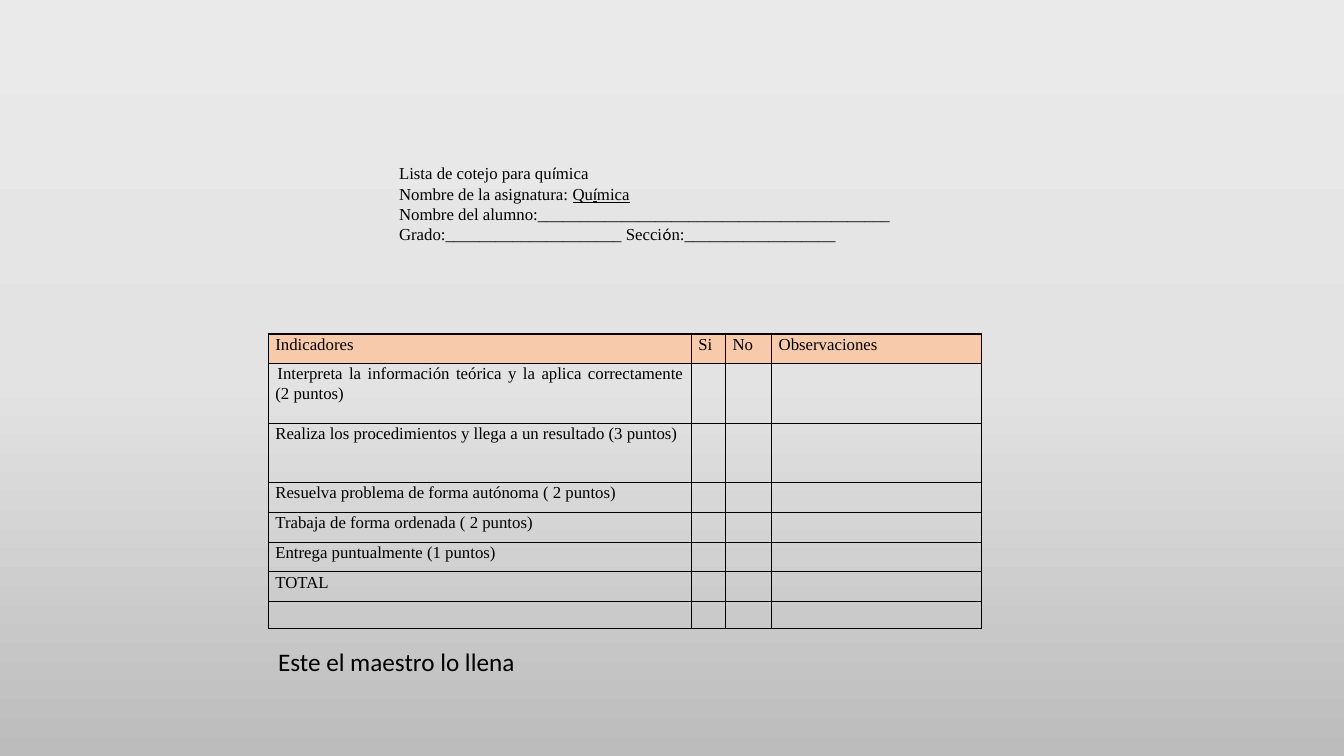
from copy import deepcopy

from lxml import etree
from pptx import Presentation
from pptx.dml.color import RGBColor
from pptx.enum.text import PP_ALIGN
from pptx.oxml.ns import qn
from pptx.util import Pt

LEFT, JUSTIFY = PP_ALIGN.LEFT, PP_ALIGN.JUSTIFY

BLACK = RGBColor(0x00, 0x00, 0x00)
PEACH = RGBColor(0xF7, 0xCA, 0xAC)
BACKDROP = [
    (0, RGBColor(0xEB, 0xEA, 0xEA)),
    (0.5, RGBColor(0xE4, 0xE3, 0xE3)),
    (1, RGBColor(0xBD, 0xBC, 0xBC)),
]
SERIF, SANS = "Times New Roman", "Calibri"

HEADINGS = ["Indicadores", "Si", "No", "Observaciones"]
INDICATORS = [
    "Interpreta la información teórica y la aplica correctamente (2 puntos)",
    "Realiza los procedimientos y llega a un resultado (3 puntos)",
    "Resuelva problema de forma autónoma ( 2 puntos)",
    "Trabaja de forma ordenada ( 2 puntos)",
    "Entrega puntualmente (1 puntos)",
]
COLUMN_WIDTHS = [302.2, 24.4, 33, 149.8]
ROW_HEIGHTS = [21.25, 42.5, 42.5, 21.25, 21.25, 21.25, 21.25, 19.4]

# Each line is a list of (words, format) pieces.
STUDENT_DATA = [
    [("Lista de cotejo para qu", {}), ("í", {"font": SANS}), ("mica", {})],
    [
        ("Nombre de la asignatura: ", {}),
        ("Qu", {"underline": True}),
        ("í", {"font": SANS, "underline": True}),
        ("mica", {"underline": True}),
    ],
    [("Nombre del alumno:" + "_" * 42, {})],
    [
        ("Grado:" + "_" * 21 + " Secci", {}),
        ("ó", {"font": SANS}),
        ("n:" + "_" * 18, {}),
    ],
]


def write(paragraph, words, font=SERIF, size=12, color=BLACK, underline=None):
    run = paragraph.add_run()
    run.text = words
    run.font.name = font
    run.font.size = Pt(size)
    run.font.color.rgb = color
    run.font.underline = underline


def indent_first_line(paragraph, points):
    paragraph._p.get_or_add_pPr().set("indent", str(Pt(points)))


class Sheet:
    """A slide together with the style of its elements."""

    border_width = 1
    cell_margin = 5.2
    line_spacing = 1.07
    first_indent = 1.5

    def __init__(self, slide):
        self.slide = slide

    def backdrop(self, colors):
        fill = self.slide.background.fill
        fill.gradient()
        fill.gradient_angle = 270
        stop_list = self.slide.element.find(".//" + qn("a:gsLst"))
        stop_list.insert(1, deepcopy(stop_list[0]))
        for stop, (position, color) in zip(fill.gradient_stops, colors):
            stop.position = position
            stop.color.rgb = color

    def text(self, left, top, width, height, lines, indent=0):
        frame = self.slide.shapes.add_textbox(
            Pt(left), Pt(top), Pt(width), Pt(height)).text_frame
        frame.word_wrap = True
        for number, pieces in enumerate(lines):
            line = frame.add_paragraph() if number else frame.paragraphs[0]
            indent_first_line(line, indent)
            for words, style in pieces:
                write(line, words, **style)

    def table(self, left, top, widths, heights):
        grid = self.slide.shapes.add_table(
            len(heights), len(widths), Pt(left), Pt(top),
            Pt(sum(widths)), Pt(sum(heights))).table
        for column, width in zip(grid.columns, widths):
            column.width = Pt(width)
        for row, height in zip(grid.rows, heights):
            row.height = Pt(height)
        return grid

    def cell(self, cell, words="", fill=None, align=LEFT, indent=0):
        cell.margin_left = cell.margin_right = Pt(self.cell_margin)
        cell.margin_top = cell.margin_bottom = 0
        self.borders(cell)
        if fill is None:
            cell.fill.background()
        else:
            cell.fill.solid()
            cell.fill.fore_color.rgb = fill
        entry = cell.text_frame.paragraphs[0]
        entry.alignment = align
        entry.line_spacing = self.line_spacing
        indent_first_line(entry, indent)
        if words:
            write(entry, words)
        else:
            etree.SubElement(entry._p, qn("a:endParaRPr"), sz="1200")

    def borders(self, cell):
        properties = cell._tc.get_or_add_tcPr()
        for side in ("lnL", "lnR", "lnT", "lnB"):
            line = etree.SubElement(
                properties, qn("a:" + side), w=str(Pt(self.border_width)))
            solid = etree.SubElement(line, qn("a:solidFill"))
            etree.SubElement(solid, qn("a:srgbClr"), val=str(BLACK))


def main():
    deck = Presentation()
    deck.slide_width, deck.slide_height = Pt(960), Pt(540)
    sheet = Sheet(deck.slides.add_slide(deck.slide_layouts[6]))
    sheet.backdrop(BACKDROP)

    checklist = sheet.table(191.5, 238.6, COLUMN_WIDTHS, ROW_HEIGHTS)
    for column, heading in enumerate(HEADINGS):
        sheet.cell(checklist.cell(0, column), heading, fill=PEACH)
    for row, indicator in enumerate(INDICATORS, start=1):
        sheet.cell(checklist.cell(row, 0), indicator, align=JUSTIFY,
                   indent=sheet.first_indent if row == 1 else 0)
    sheet.cell(checklist.cell(6, 0), "TOTAL")
    sheet.cell(checklist.cell(7, 0))
    for row in range(1, len(ROW_HEIGHTS)):
        for column in range(1, len(COLUMN_WIDTHS)):
            sheet.cell(checklist.cell(row, column))

    sheet.text(276.5, 113, 404, 87, STUDENT_DATA, indent=sheet.first_indent)
    sheet.text(191.5, 458, 600, 29,
               [[("Este el maestro lo llena", {"font": SANS, "size": 18})]])
    deck.save("out.pptx")


if __name__ == "__main__":
    main()
